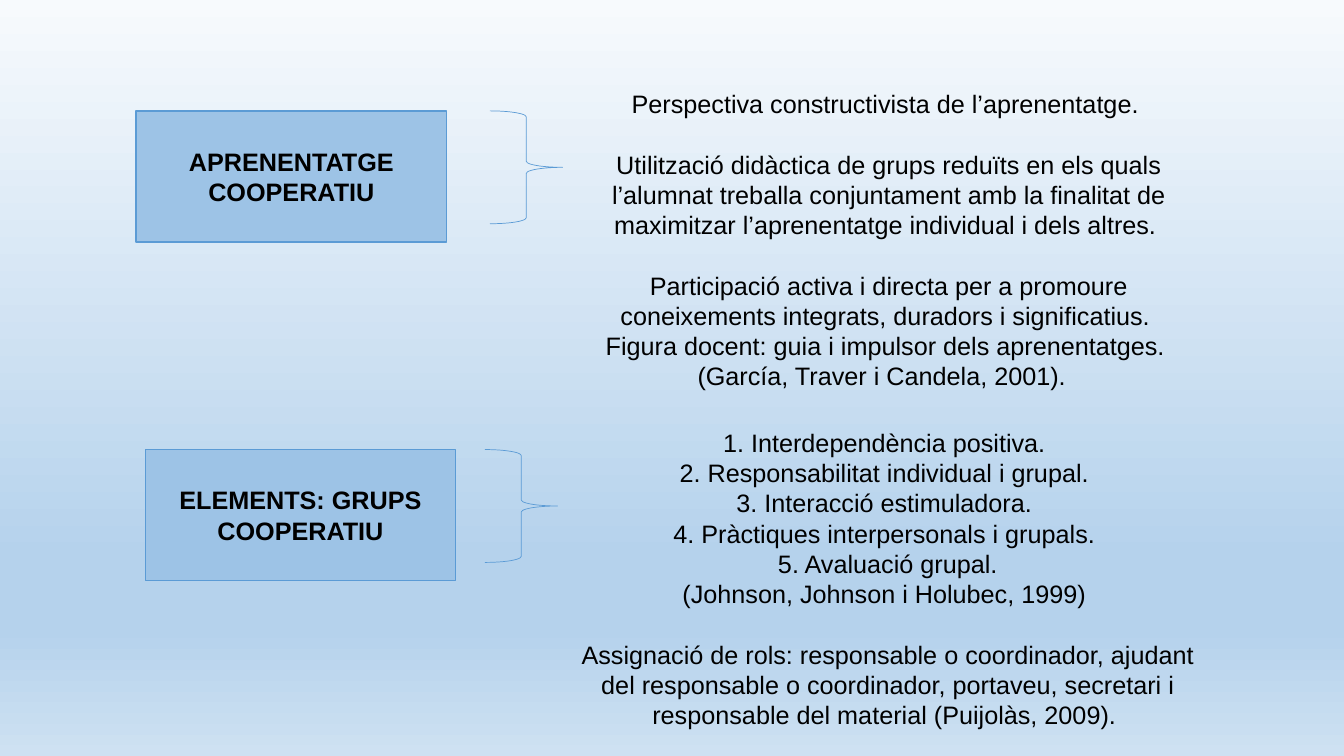
from lxml import etree
from pptx import Presentation
from pptx.dml.color import RGBColor
from pptx.enum.shapes import MSO_SHAPE
from pptx.enum.text import MSO_ANCHOR, PP_ALIGN
from pptx.oxml.ns import qn
from pptx.util import Inches, Pt

RECTANGLE, BRACE = MSO_SHAPE.RECTANGLE, MSO_SHAPE.RIGHT_BRACE
MIDDLE, TOP = MSO_ANCHOR.MIDDLE, MSO_ANCHOR.TOP
CENTER = PP_ALIGN.CENTER

BLACK = RGBColor(0x00, 0x00, 0x00)
LIGHT_BLUE = RGBColor(0x9D, 0xC3, 0xE6)
BLUE = RGBColor(0x5B, 0x9B, 0xD5)
BACKGROUND = [(0, "F7FAFD"), (74, "B5D2EC"), (83, "B5D2EC"), (100, "CEE1F2")]

LABEL_SIZE = (3.08, 1.3)
BRACE_SIZE = (0.72, 1.12)
TEXT_WIDTH = 6.43
TEXT_RISE = 0.27
LINE_GAP = Pt(21.6)

# Each group of lines is set apart from the one before it by LINE_GAP.
SECTIONS = [
    {
        "label": "APRENENTATGE COOPERATIU",
        "top": 1.1, "label_left": 1.35, "brace_left": 4.86,
        "text_left": 5.6, "text_height": 3.43,
        "groups": [
            ["Perspectiva constructivista de l’aprenentatge. "],
            ["Utilització didàctica de grups reduïts en els quals l’alumnat treballa "
             "conjuntament amb la finalitat de maximitzar l’aprenentatge individual "
             "i dels altres. "],
            ["Participació activa i directa per a promoure coneixements integrats, "
             "duradors i significatius. ",
             "Figura docent: guia i impulsor dels aprenentatges. ",
             "(García, Traver i Candela, 2001).  "],
        ],
    },
    {
        "label": "ELEMENTS: GRUPS COOPERATIU",
        "top": 4.46, "label_left": 1.44, "brace_left": 4.81,
        "text_left": 5.59, "text_height": 3.13,
        "groups": [
            ["1. Interdependència positiva. ",
             "2. Responsabilitat individual i grupal. ",
             "3. Interacció estimuladora. ",
             "4. Pràctiques interpersonals i grupals. ",
             "5. Avaluació grupal.",
             "(Johnson, Johnson i Holubec, 1999) "],
            ["Assignació de rols: responsable o coordinador, ajudant del responsable "
             "o coordinador, portaveu, secretari i responsable del material "
             "(Puijolàs, 2009). "],
        ],
    },
]


def paint_background(page):
    """Fill the page with the vertical gradient."""
    fill = page.background.fill
    fill.gradient()
    fill.gradient_angle = 270
    stops = next(page.element.iter(qn("a:gsLst")))
    for stop in list(stops):
        stops.remove(stop)
    for percent, color in BACKGROUND:
        stop = etree.SubElement(stops, qn("a:gs"), pos=str(percent * 1000))
        etree.SubElement(stop, qn("a:srgbClr"), val=color)


def write(box, groups, anchor, bold=False):
    """Write centred groups of lines, with a gap between groups."""
    frame = box.text_frame
    frame.word_wrap = True
    frame.vertical_anchor = anchor
    lines = [(line, group_number > 0 and line_number == 0)
             for group_number, group in enumerate(groups)
             for line_number, line in enumerate(group)]
    for number, (line, starts_group) in enumerate(lines):
        para = frame.add_paragraph() if number else frame.paragraphs[0]
        para.text = line
        para.alignment = CENTER
        para.font.name = "Arial"
        para.font.size = Pt(18)
        para.font.bold = bold
        para.font.color.rgb = BLACK
        if starts_group:
            para.space_before = LINE_GAP


def add_outlined(page, kind, left, top, size, line_width):
    """Add a blue-outlined shape without shadow."""
    shape = page.shapes.add_shape(
        kind, Inches(left), Inches(top), Inches(size[0]), Inches(size[1]))
    shape.shadow.inherit = False
    shape.line.color.rgb = BLUE
    shape.line.width = Pt(line_width)
    return shape


def add_section(page, section):
    """Add a label, its brace and the text it points to."""
    top = section["top"]
    label = add_outlined(page, RECTANGLE, section["label_left"], top, LABEL_SIZE, 1)
    label.fill.solid()
    label.fill.fore_color.rgb = LIGHT_BLUE
    write(label, [[section["label"]]], MIDDLE, bold=True)

    brace = add_outlined(page, BRACE, section["brace_left"], top, BRACE_SIZE, 0.5)
    brace.fill.background()

    text = page.shapes.add_textbox(
        Inches(section["text_left"]), Inches(top - TEXT_RISE),
        Inches(TEXT_WIDTH), Inches(section["text_height"]))
    write(text, section["groups"], TOP)


def main():
    """Build the slide and save it."""
    deck = Presentation()
    deck.slide_width, deck.slide_height = Inches(13.33), Inches(7.5)
    page = deck.slides.add_slide(deck.slide_layouts[6])
    paint_background(page)
    for section in SECTIONS:
        add_section(page, section)
    deck.save("out.pptx")


if __name__ == "__main__":
    main()
